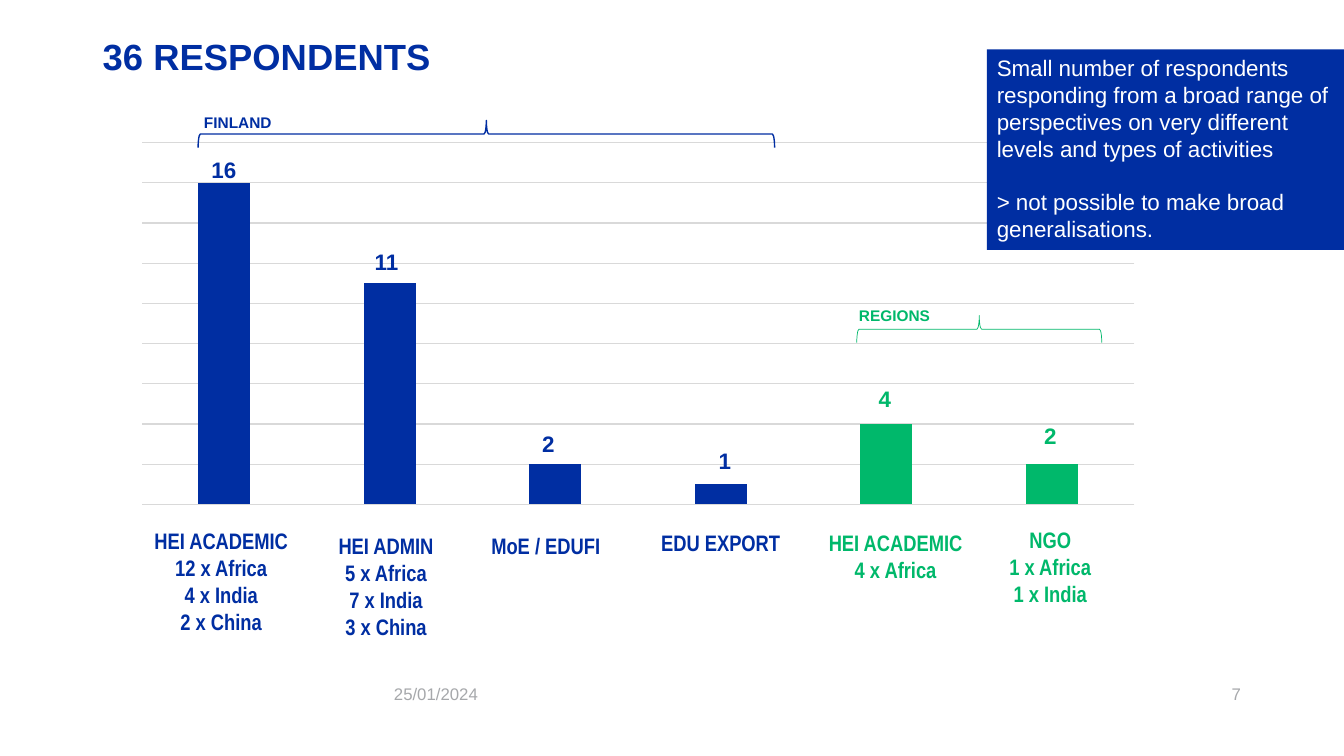
from pptx import Presentation
from pptx.chart.data import CategoryChartData
from pptx.dml.color import RGBColor
from pptx.enum import chart as charts, shapes, text
from pptx.oxml import parse_xml
from pptx.util import Pt

BLUE, GREEN, GREY, WHITE = "002EA2", "00B86B", "A6A8AB", "FFFFFF"
LEFT, CENTER, RIGHT = text.PP_ALIGN.LEFT, text.PP_ALIGN.CENTER, text.PP_ALIGN.RIGHT
GROW = text.MSO_AUTO_SIZE.SHAPE_TO_FIT_TEXT
TOP, MIDDLE, BOTTOM = text.MSO_ANCHOR.TOP, text.MSO_ANCHOR.MIDDLE, text.MSO_ANCHOR.BOTTOM


def paint(target, color):
    target.rgb = RGBColor.from_string(color)


def write(shape, words, size, color, bold=True, name="Arial", align=LEFT,
          wrap=True, fit=GROW, anchor=TOP):
    frame = shape.text_frame
    frame.text = words
    for key, value in {"word_wrap": wrap, "auto_size": fit, "vertical_anchor": anchor}.items():
        setattr(frame, key, value)
    for paragraph in frame.paragraphs:
        paragraph.alignment = align
        for run in paragraph.runs:
            for key, value in {"size": Pt(size), "bold": bold, "name": name}.items():
                setattr(run.font, key, value)
            paint(run.font.color, color)


deck = Presentation()
deck.slide_width, deck.slide_height = Pt(960), Pt(540)
slide = deck.slides.add_slide(deck.slide_layouts[5])
items = slide.shapes

headline = items.title
for key, value in {"left": 66.2, "top": -10, "width": 827.3, "height": 69.8}.items():
    setattr(headline, key, Pt(value))
write(headline, "36 RESPONDENTS", 26, BLUE, fit=text.MSO_AUTO_SIZE.NONE, anchor=BOTTOM)
headline.text_frame.paragraphs[0].line_spacing = 0.9

for words, left, width, align in [("25/01/2024", 274.3, 77.8, LEFT), ("7", 835.2, 58.3, RIGHT)]:
    footer = items.add_textbox(Pt(left), Pt(481.7), Pt(width), Pt(28.1))
    write(footer, words, 12, GREY, bold=False, align=align,
          fit=text.MSO_AUTO_SIZE.NONE, anchor=MIDDLE)

# count, count position, group wording, group box, colour
groups = [
    (16, (144, 108), "HEI ACADEMIC\n12 x Africa\v4 x India\v2 x China", (102.2, 373, 111.6, 85), BLUE),
    (11, (260.6, 173.5), "HEI ADMIN\n5 x Africa\v7 x India\v3 x China", (234, 376.6, 83.5, 104.4), BLUE),
    (2, (380.2, 303.8), "MoE / EDUFI", (343.4, 376.6, 92.9, 26.6), BLUE),
    (1, (506.2, 316.1), "EDU EXPORT", (464.4, 374.4, 100.8, 26.6), BLUE),
    (4, (620.6, 271.4), "HEI ACADEMIC\n4 x Africa", (583.9, 374.4, 111.6, 46.1), GREEN),
    (2, (738.7, 298.1), "NGO\n1 x Africa\v1 x India", (713.5, 372.2, 73.4, 65.5), GREEN),
]

respondents = CategoryChartData()
respondents.categories = [str(n) for n in range(1, len(groups) + 1)]
respondents.add_series("Series 1", [group[0] for group in groups])
chart = items.add_chart(charts.XL_CHART_TYPE.COLUMN_CLUSTERED,
                        Pt(86.4), Pt(96.5), Pt(738.7), Pt(269.3), respondents).chart
chart.has_legend = chart.has_title = False
chart.font.name, chart.font.size = "Arial", Pt(10)
paint(chart.font.color, "000000")
chart.category_axis.visible = False
counts = chart.value_axis
for key, value in {"visible": False, "minimum_scale": 0, "maximum_scale": 18,
                   "major_unit": 2, "has_major_gridlines": True}.items():
    setattr(counts, key, value)
counts.major_gridlines.format.line.width = Pt(0.75)
paint(counts.major_gridlines.format.line.color, "D9D9D9")
columns = chart.plots[0]
for key, value in {"gap_width": 219, "overlap": -27, "vary_by_categories": False}.items():
    setattr(columns, key, value)

plot_area = chart._chartSpace.chart.plotArea
for old in plot_area.findall("{*}layout"):
    plot_area.remove(old)
plot_area.insert(0, parse_xml(
    '<c:layout xmlns:c="http://schemas.openxmlformats.org/drawingml/2006/chart"><c:manualLayout>'
    '<c:layoutTarget val="inner"/><c:xMode val="edge"/><c:yMode val="edge"/>'
    '<c:x val="0.02"/><c:y val="0.02"/><c:w val="0.96"/><c:h val="0.96"/>'
    '</c:manualLayout></c:layout>'))

bars = columns.series[0]
bars.format.fill.solid()
paint(bars.format.fill.fore_color, "FDDA24")
for index, (count, spot, wording, box, color) in enumerate(groups):
    bar = bars.points[index].format.fill
    bar.solid()
    paint(bar.fore_color, color)
    tally = items.add_textbox(*map(Pt, spot), Pt(53.3), Pt(26.6))
    write(tally, str(count), 16, color)
    group_name = items.add_textbox(*map(Pt, box))
    write(group_name, wording, 16, color, name="Arial Narrow", align=CENTER, wrap=False)

areas = [
    ("FINLAND", (138.2, 77, 63.4, 20.9), (337.7, -110.2, 19.4, 411.8), 1, BLUE),
    ("REGIONS", (606.2, 215.3, 65.5, 20.9), (689.8, 147.6, 19.4, 175), 0.5, GREEN),
]
for area, box, span, weight, color in areas:
    brace = items.add_shape(shapes.MSO_SHAPE.RIGHT_BRACE, *map(Pt, span))
    brace.rotation = 270
    brace.shadow.inherit = False
    brace.fill.background()
    brace.line.width = Pt(weight)
    paint(brace.line.color, color)
    area_name = items.add_textbox(*map(Pt, box))
    write(area_name, area, 11, color, align=CENTER, wrap=False)

caveat = items.add_shape(shapes.MSO_SHAPE.RECTANGLE, Pt(704.9), Pt(35.3), Pt(255.1), Pt(143.3))
caveat.shadow.inherit = False
caveat.fill.solid()
paint(caveat.fill.fore_color, BLUE)
caveat.line.fill.background()
write(caveat, "Small number of respondents responding from a broad range of perspectives "
      "on very different levels and types of activities\n"
      "> not possible to make broad generalisations.", 16, WHITE, bold=False)
caveat.text_frame.paragraphs[1].space_before = Pt(19)

deck.save("out.pptx")
